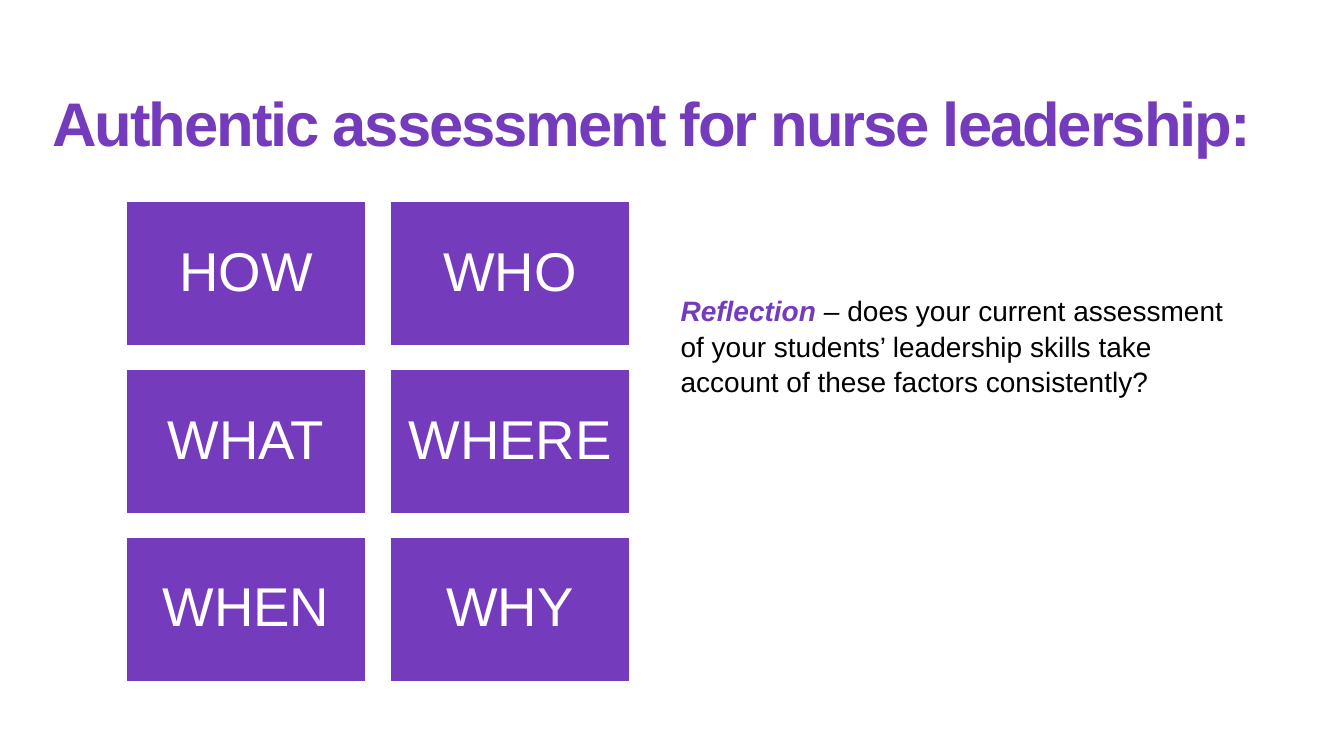
from pptx import Presentation
from pptx.dml.color import RGBColor
from pptx.enum.shapes import MSO_SHAPE
from pptx.enum.text import MSO_ANCHOR, PP_ALIGN
from pptx.util import Inches, Pt

RECTANGLE = MSO_SHAPE.RECTANGLE
TOP, MIDDLE = MSO_ANCHOR.TOP, MSO_ANCHOR.MIDDLE
LEFT, CENTER = PP_ALIGN.LEFT, PP_ALIGN.CENTER

# Content
TITLE = "Authentic assessment for nurse leadership:"
QUESTIONS = [("HOW", "WHO"), ("WHAT", "WHERE"), ("WHEN", "WHY")]
REFLECTION = [
    ("Reflection ", "keyword"),
    ("– ", "dash"),
    ("does your current assessment of your students’ leadership skills "
     "take account of these factors consistently?", "body"),
]

# Theme
PURPLE = RGBColor(0x75, 0x3B, 0xBD)
WHITE = RGBColor(0xFF, 0xFF, 0xFF)
BLACK = RGBColor(0, 0, 0)
FONT = "Arial"
THEME = {
    "title": {"size": Pt(44), "bold": True, "color": PURPLE},
    "tile": {"size": Pt(39), "color": WHITE},
    "keyword": {"size": Pt(20), "bold": True, "italic": True, "color": PURPLE},
    "dash": {"size": Pt(20), "italic": True, "color": BLACK},
    "body": {"size": Pt(20), "color": BLACK},
}
TITLE_TRACKING = -150  # hundredths of a point

# Layout, in inches
TITLE_BOX = (0.52, 0.53, 12.29, 1.45)
REFLECTION_BOX = (6.75, 2.9, 5.67, 3.86)
GRID_LEFT, GRID_TOP = 1.25, 2
TILE_WIDTH, TILE_HEIGHT = 2.38, 1.43
COLUMN_STEP, ROW_STEP = 2.62, 1.665
TILE_INSET = 0.16


def write(box, spans, anchor, align, spacing, inset=0):
    """Fill a box with one paragraph of styled spans."""
    frame = box.text_frame
    frame.word_wrap = True
    frame.vertical_anchor = anchor
    for side in ("left", "top", "right", "bottom"):
        setattr(frame, f"margin_{side}", Inches(inset))
    para = frame.paragraphs[0]
    para.alignment = align
    para.line_spacing = spacing
    for text, style in spans:
        span = para.add_run()
        span.text = text
        span.font.name = FONT
        for name, value in THEME[style].items():
            if name == "color":
                span.font.color.rgb = value
            else:
                setattr(span.font, name, value)
    return para


deck = Presentation()
deck.slide_width, deck.slide_height = Inches(13.33), Inches(7.5)
page = deck.slides.add_slide(deck.slide_layouts[6])

# Title
title_box = page.shapes.add_textbox(*map(Inches, TITLE_BOX))
title = write(title_box, [(TITLE, "title")], MIDDLE, LEFT, 0.9)
title.runs[0].font._element.set("spc", str(TITLE_TRACKING))

# Question tiles
for row, words in enumerate(QUESTIONS):
    for column, word in enumerate(words):
        tile = page.shapes.add_shape(
            RECTANGLE,
            Inches(GRID_LEFT + column * COLUMN_STEP),
            Inches(GRID_TOP + row * ROW_STEP),
            Inches(TILE_WIDTH), Inches(TILE_HEIGHT))
        tile.shadow.inherit = False
        tile.fill.solid()
        tile.fill.fore_color.rgb = PURPLE
        tile.line.color.rgb = WHITE
        tile.line.width = Pt(1)
        write(tile, [(word, "tile")], MIDDLE, CENTER, 0.9, TILE_INSET)

# Reflection prompt
reflection_box = page.shapes.add_textbox(*map(Inches, REFLECTION_BOX))
write(reflection_box, REFLECTION, TOP, LEFT, 1.05)

deck.save("out.pptx")
